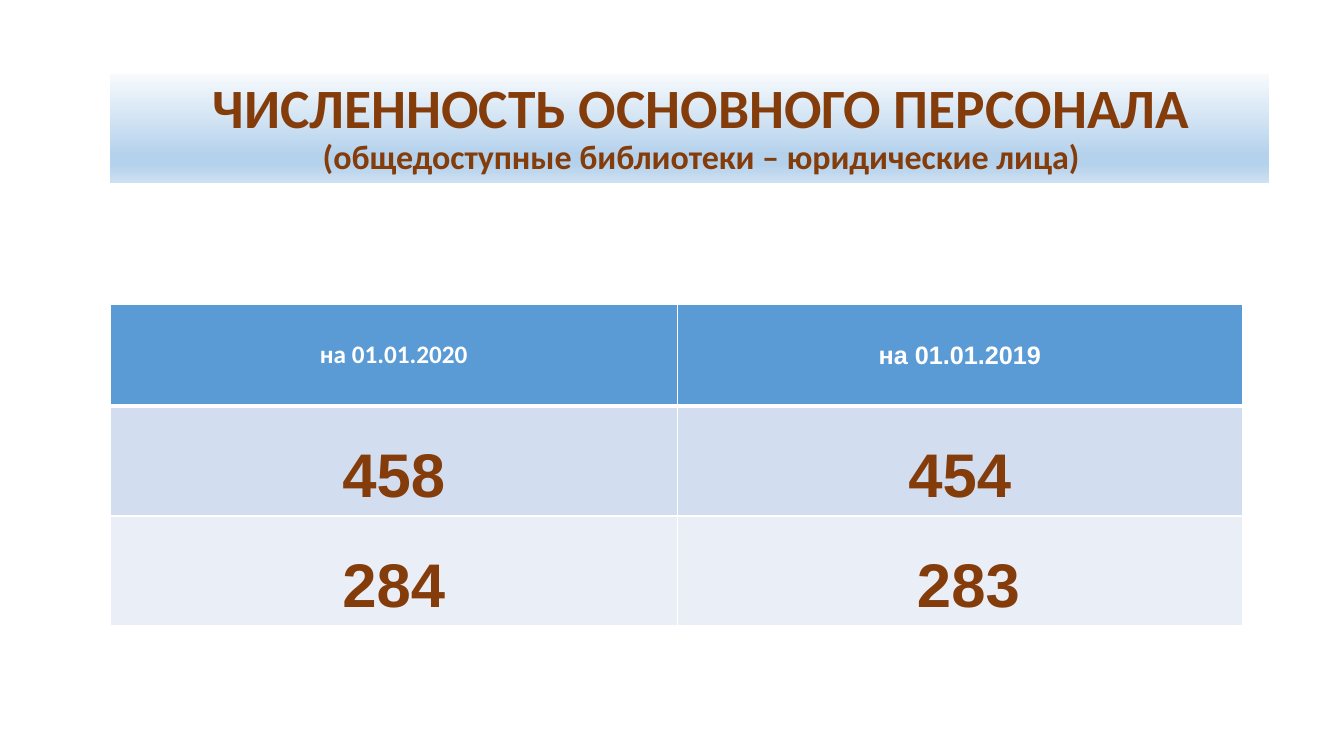
import pptx
import pptx.dml.color
import pptx.enum.text
import pptx.oxml
import pptx.oxml.ns
import pptx.util
from pptx.util import Inches

BROWN, WHITE, BLUE = "843C0B", "FFFFFF", "5B9BD5"
MIDDLE = pptx.enum.text.MSO_ANCHOR.MIDDLE
BOTTOM = pptx.enum.text.MSO_ANCHOR.BOTTOM
NS = pptx.oxml.ns.nsdecls("a")


def rgb(value):
    return pptx.dml.color.RGBColor.from_string(value)


def add_text(p, text, size, font, color, indent=0):
    """Write one bold centred run; indent moves the paragraph's left edge."""
    p.alignment = pptx.enum.text.PP_ALIGN.CENTER
    if indent:
        p._p.get_or_add_pPr().set("marL", str(Inches(indent)))
    r = p.add_run()
    r.text = text
    r.font.size = pptx.util.Pt(size)
    r.font.name = font
    r.font.bold = True
    r.font.color.rgb = rgb(color)


def fill_gradient(shape, stops):
    """Fill from top to bottom with (percent, colour) stops."""
    shape.fill.gradient()
    shape.fill.gradient_angle = 270
    gs_list = shape._element.spPr.find(".//" + pptx.oxml.ns.qn("a:gsLst"))
    for gs in list(gs_list):
        gs_list.remove(gs)
    for percent, color in stops:
        gs_list.append(pptx.oxml.parse_xml(
            f'<a:gs {NS} pos="{percent * 1000}"><a:srgbClr val="{color}"/></a:gs>'))


def set_borders(cell, top, bottom):
    """Draw white borders; top and bottom are widths in points."""
    widths = {"lnL": 1, "lnR": 1, "lnT": top, "lnB": bottom}
    tc_pr = cell._tc.get_or_add_tcPr()
    for i, (side, width) in enumerate(widths.items()):
        tc_pr.insert(i, pptx.oxml.parse_xml(
            f'<a:{side} {NS} w="{pptx.util.Pt(width)}"><a:solidFill>'
            f'<a:srgbClr val="{WHITE}"/></a:solidFill></a:{side}>'))


def add_title(s):
    title = s.shapes.title
    title.left, title.top = Inches(1.09), Inches(0.73)
    title.width, title.height = Inches(11.5), Inches(1.09)
    fill_gradient(title, [(0, "F7FAFD"), (74, "B5D2EC"), (83, "B5D2EC"), (100, "CEE1F2")])
    tf = title.text_frame
    tf.word_wrap = True
    tf.auto_size = pptx.enum.text.MSO_AUTO_SIZE.NONE
    tf.vertical_anchor = MIDDLE
    heading, note = tf.paragraphs[0], tf.add_paragraph()
    add_text(heading, "ЧИСЛЕННОСТЬ ОСНОВНОГО ПЕРСОНАЛА", 39.6, "Calibri", BROWN, 0.23)
    add_text(note, "(общедоступные библиотеки – юридические лица)", 24.3, "Calibri", BROWN)
    for p in tf.paragraphs:
        p.line_spacing = 0.9


def add_cell(cell, text, fill, anchor, borders, **style):
    cell.fill.solid()
    cell.fill.fore_color.rgb = rgb(fill)
    cell.vertical_anchor = anchor
    set_borders(cell, *borders)
    add_text(cell.text_frame.paragraphs[0], text, **style)


def add_staff_table(s):
    widths, heights = [5.63, 5.6], [1.01, 1.09, 1.09]
    table = s.shapes.add_table(3, 2, Inches(1.09), Inches(3.02),
                               Inches(sum(widths)), Inches(sum(heights))).table
    for column, width in zip(table.columns, widths):
        column.width = Inches(width)
    for row, height in zip(table.rows, heights):
        row.height = Inches(height)

    dates = [("на 01.01.2020", "Calibri"), ("на 01.01.2019", "Arial")]
    for col, (date, font) in enumerate(dates):
        add_cell(table.cell(0, col), date, BLUE, MIDDLE, (1, 3),
                 size=18, font=font, color=WHITE)

    counts = [("D2DEEF", (3, 1), [("458", 0), ("454", 0)]),
              ("EAEFF7", (1, 1), [("284", 0), ("283", 0.17)])]
    for row, (fill, borders, values) in enumerate(counts, 1):
        for col, (value, indent) in enumerate(values):
            add_cell(table.cell(row, col), value, fill, BOTTOM, borders,
                     size=44, font="Arial", color=BROWN, indent=indent)


def main():
    prs = pptx.Presentation()
    prs.slide_width, prs.slide_height = Inches(13.33), Inches(7.5)
    s = prs.slides.add_slide(prs.slide_layouts[5])
    add_title(s)
    add_staff_table(s)
    prs.save("out.pptx")


if __name__ == "__main__":
    main()
